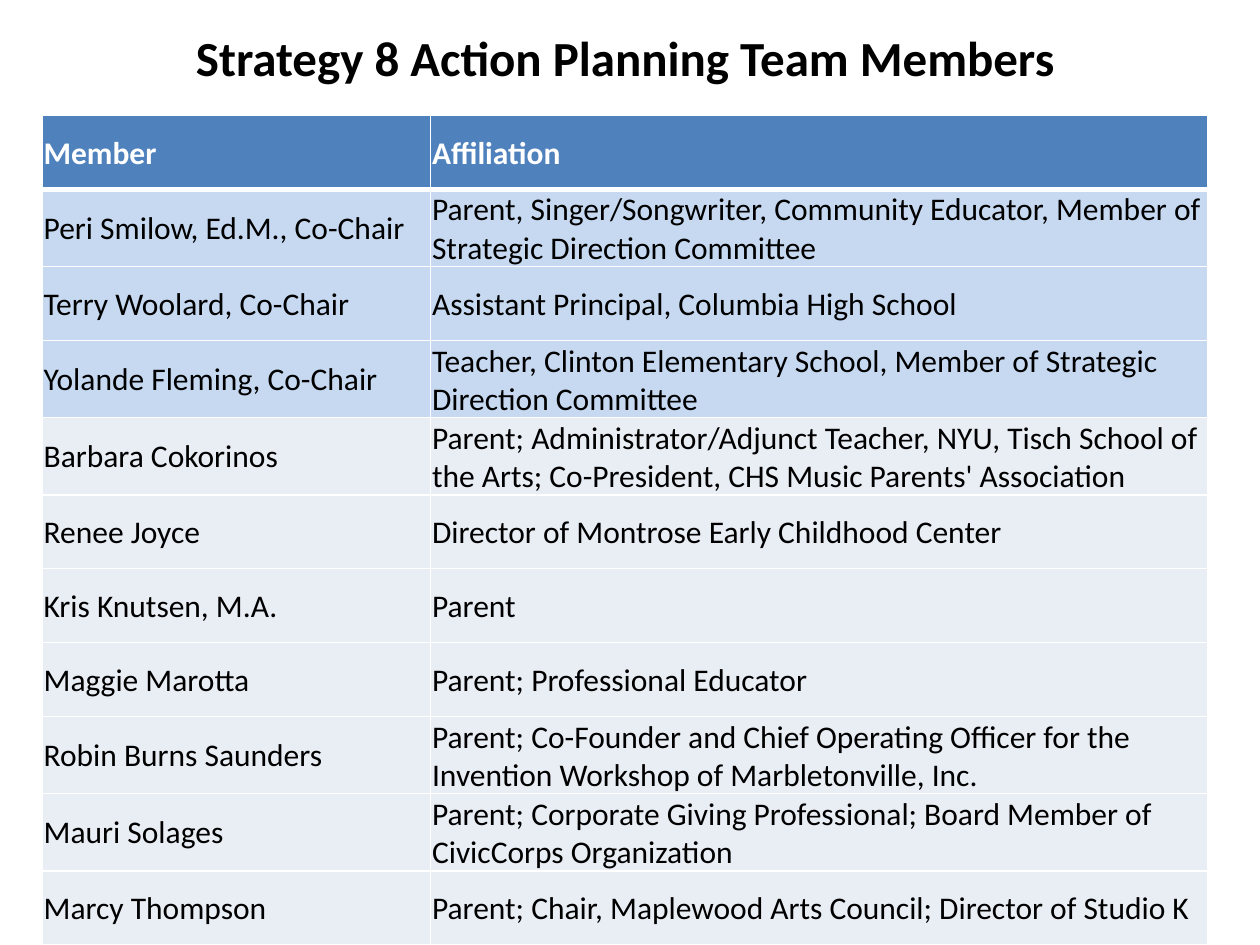
from dataclasses import dataclass

from lxml import etree
from pptx import Presentation
from pptx.dml.color import RGBColor
from pptx.enum import text
from pptx.oxml import ns
from pptx.util import Cm, Pt

# Content
TITLE = "Strategy 8 Action Planning Team Members"
HEADER = ("Member", "Affiliation")
CO_CHAIRS = [
    ("Peri Smilow, Ed.M., Co-Chair",
     "Parent, Singer/Songwriter, Community Educator, Member of Strategic Direction Committee"),
    ("Terry Woolard, Co-Chair", "Assistant Principal, Columbia High School"),
    ("Yolande Fleming, Co-Chair",
     "Teacher, Clinton Elementary School, Member of Strategic Direction Committee"),
]
MEMBERS = [
    ("Barbara Cokorinos",
     "Parent; Administrator/Adjunct Teacher, NYU, Tisch School of the Arts; "
     "Co-President, CHS Music Parents' Association"),
    ("Renee Joyce", "Director of Montrose Early Childhood Center"),
    ("Kris Knutsen, M.A.", "Parent"),
    ("Maggie Marotta", "Parent; Professional Educator"),
    ("Robin Burns Saunders",
     "Parent; Co-Founder and Chief Operating Officer for the "
     "Invention Workshop of Marbletonville, Inc."),
    ("Mauri Solages",
     "Parent; Corporate Giving Professional; Board Member of CivicCorps Organization"),
    ("Marcy Thompson", "Parent; Chair, Maplewood Arts Council; Director of Studio K"),
]


@dataclass(frozen=True)
class Theme:
    font: str = "Calibri"
    title_size: int = 28
    body_size: int = 18
    ink: str = "000000"
    white: str = "FFFFFF"
    header_fill: str = "4F81BD"
    chair_fill: str = "C6D9F1"
    member_fill: str = "E9EDF4"
    rule: float = 1
    header_rule: float = 3


THEME = Theme()
COLUMN_WIDTHS = (Cm(7.83), Cm(15.67))
ROW_HEIGHT = Cm(1.49)
CELL_INSET = Cm(0.03)


def style_text(paragraph, size, color, bold):
    for run in paragraph.runs:
        run.font.name = THEME.font
        run.font.size = Pt(size)
        run.font.bold = bold
        run.font.color.rgb = RGBColor.from_string(color)


def add_border(cell, side, width):
    properties = cell._tc.get_or_add_tcPr()
    line = etree.SubElement(properties, ns.qn(f"a:ln{side}"), w=str(Pt(width)))
    fill = etree.SubElement(line, ns.qn("a:solidFill"))
    etree.SubElement(fill, ns.qn("a:srgbClr"), val=THEME.white)


def fill_cell(cell, words, fill, color, bold, top_rule, bottom_rule):
    cell.text_frame.text = words
    style_text(cell.text_frame.paragraphs[0], THEME.body_size, color, bold)
    cell.vertical_anchor = text.MSO_ANCHOR.MIDDLE
    cell.margin_left = cell.margin_right = cell.margin_top = CELL_INSET
    cell.margin_bottom = 0
    # Borders come before the fill in the cell properties
    for side, width in zip("LRTB", (THEME.rule, THEME.rule, top_rule, bottom_rule)):
        add_border(cell, side, width)
    cell.fill.solid()
    cell.fill.fore_color.rgb = RGBColor.from_string(fill)


def add_title(slide):
    title = slide.shapes.title
    title.left, title.top, title.width, title.height = Cm(1.9), Cm(0.43), Cm(21.4), Cm(1.45)
    frame = title.text_frame
    frame.text = TITLE
    frame.word_wrap = True
    frame.auto_size = text.MSO_AUTO_SIZE.SHAPE_TO_FIT_TEXT
    frame.vertical_anchor = text.MSO_ANCHOR.TOP
    paragraph = frame.paragraphs[0]
    paragraph.alignment = text.PP_ALIGN.CENTER
    style_text(paragraph, THEME.title_size, THEME.ink, True)


def add_member_table(slide):
    rows = [(HEADER, THEME.header_fill)]
    rows += [(entry, THEME.chair_fill) for entry in CO_CHAIRS]
    rows += [(entry, THEME.member_fill) for entry in MEMBERS]
    table = slide.shapes.add_table(
        len(rows), len(HEADER), Cm(0.85), Cm(2.33),
        sum(COLUMN_WIDTHS), ROW_HEIGHT * len(rows)).table
    for column, width in zip(table.columns, COLUMN_WIDTHS):
        column.width = width
    for row_index, (entry, fill) in enumerate(rows):
        table.rows[row_index].height = ROW_HEIGHT
        is_header = row_index == 0
        color = THEME.white if is_header else THEME.ink
        top_rule = THEME.header_rule if row_index == 1 else THEME.rule
        bottom_rule = THEME.header_rule if is_header else THEME.rule
        for column_index, words in enumerate(entry):
            fill_cell(table.cell(row_index, column_index), words, fill,
                      color, is_header, top_rule, bottom_rule)


def main():
    presentation = Presentation()
    presentation.slide_width, presentation.slide_height = Cm(25.4), Cm(19.05)
    slide = presentation.slides.add_slide(presentation.slide_layouts[5])
    add_title(slide)
    add_member_table(slide)
    presentation.save("out.pptx")


if __name__ == "__main__":
    main()
